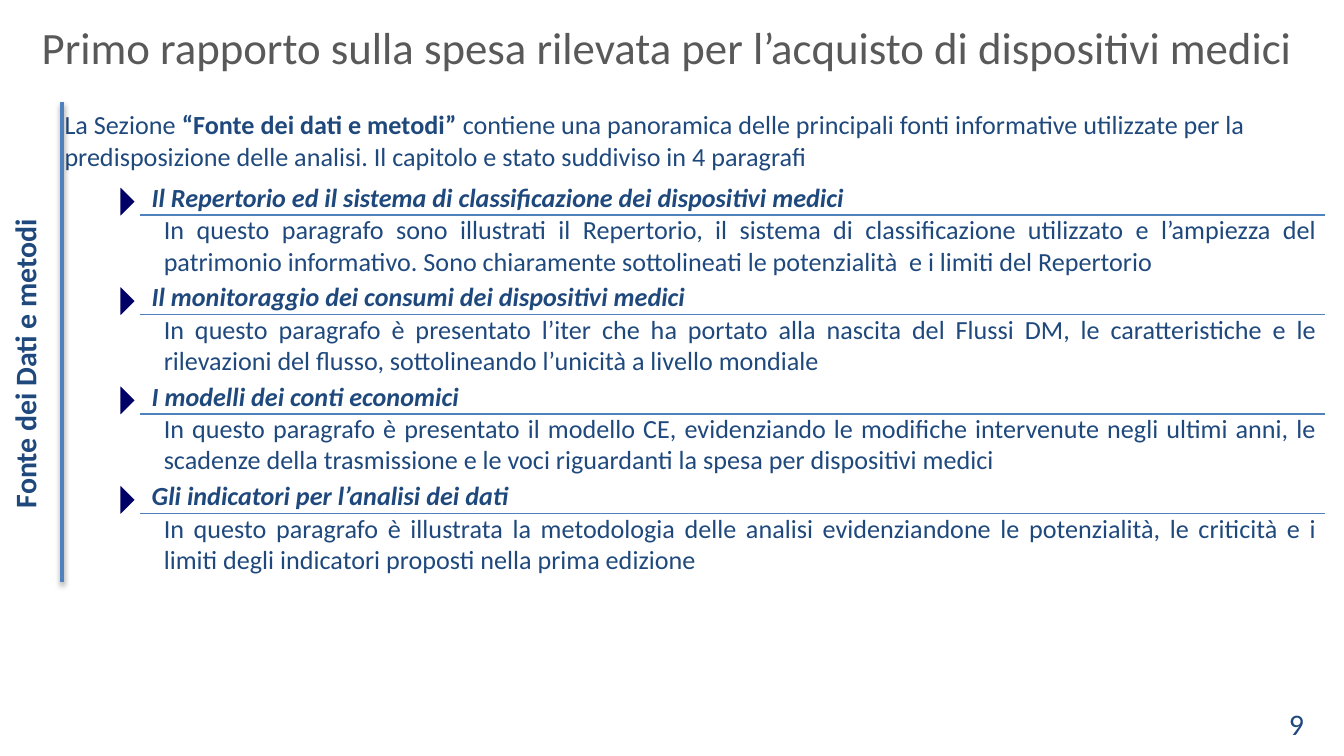
from dataclasses import dataclass

from lxml.etree import SubElement
from pptx import Presentation
from pptx.dml.color import RGBColor as Rgb
from pptx.enum.shapes import MSO_CONNECTOR as Connector, MSO_SHAPE as Shape
from pptx.enum.text import MSO_ANCHOR as Anchor, MSO_AUTO_SIZE as AutoSize, PP_ALIGN as Align
from pptx.oxml.ns import qn
from pptx.util import Inches, Pt


@dataclass(frozen=True)
class Theme:
    """Colours, font and type sizes of the slide."""
    font: str = "Calibri"
    navy: str = "1F497D"
    grey: str = "595959"
    rule: str = "4F81BD"
    marker: str = "000066"
    white: str = "FFFFFF"
    title: int = 24
    label: int = 16
    body: int = 14


THEME = Theme()
WIDTH = 10
HEIGHT = WIDTH * 9 / 16
CONTENT_TOP, CONTENT_WIDTH = 0.76, 9.59
SECTION_LEFT, SECTION_TOP, SECTION_STEP = 0.53, 1.3, 0.74
INTRO = [
    ("La Sezione ", False),
    ("“Fonte dei dati e metodi” ", True),
    ("contiene una panoramica delle principali fonti informative utilizzate per la "
     "predisposizione delle analisi. Il capitolo e stato suddiviso in 4 paragrafi", False),
]
SECTIONS = [
    ("Il Repertorio ed il sistema di classificazione dei dispositivi medici",
     "In questo paragrafo sono illustrati il Repertorio, il sistema di classificazione utilizzato "
     "e l’ampiezza del patrimonio informativo. Sono chiaramente sottolineati le potenzialità  "
     "e i limiti del Repertorio"),
    ("Il monitoraggio dei consumi dei dispositivi medici",
     "In questo paragrafo è presentato l’iter che ha portato alla nascita del Flussi DM, le "
     "caratteristiche e le rilevazioni del flusso, sottolineando l’unicità a livello mondiale"),
    ("I modelli dei conti economici",
     "In questo paragrafo è presentato il modello CE, evidenziando le modifiche intervenute negli "
     "ultimi anni, le scadenze della trasmissione e le voci riguardanti la spesa per dispositivi medici"),
    ("Gli indicatori per l’analisi dei dati",
     "In questo paragrafo è illustrata la metodologia delle analisi evidenziandone le potenzialità, "
     "le criticità e i limiti degli indicatori proposti nella prima edizione"),
]


def style_runs(paragraph, size, color=THEME.navy, bold=False, italic=False):
    """Format every run of a paragraph."""
    for run in paragraph.runs:
        font = run.font
        font.name, font.size = THEME.font, Pt(size)
        font.bold, font.italic = bold, italic
        font.color.rgb = Rgb.from_string(color)


def add_text(shapes, box, text, size, align=Align.LEFT, **style):
    """Add a wrapped text box with one paragraph."""
    frame = shapes.add_textbox(*map(Inches, box)).text_frame
    frame.word_wrap = True
    frame.text = text
    paragraph = frame.paragraphs[0]
    paragraph.alignment = align
    style_runs(paragraph, size, **style)
    return frame


def prepare_placeholder(holder, box):
    """Place a placeholder and return its first paragraph, left aligned without bullet."""
    holder.left, holder.top, holder.width, holder.height = map(Inches, box)
    frame = holder.text_frame
    frame.word_wrap = True
    frame.auto_size = AutoSize.NONE
    frame.vertical_anchor = Anchor.TOP
    paragraph = frame.paragraphs[0]
    paragraph.alignment = Align.LEFT
    paragraph.space_before = Pt(0)
    properties = paragraph._p.get_or_add_pPr()
    properties.set("marL", "0")
    properties.set("indent", "0")
    SubElement(properties, qn("a:buNone"))
    return paragraph


def add_rule(shapes, start, end, weight):
    """Add a straight rule and return its empty effect list."""
    rule = shapes.add_connector(Connector.STRAIGHT, *map(Inches, start + end))
    rule.line.color.rgb = Rgb.from_string(THEME.rule)
    rule.line.width = Pt(weight)
    return SubElement(rule._element.spPr, qn("a:effectLst"))


def add_shadow(effects):
    """Put a soft downward shadow into an effect list."""
    shadow = SubElement(effects, qn("a:outerShdw"), blurRad=str(Pt(3.1)), dist=str(Pt(1.6)),
                        dir="5400000", rotWithShape="0")
    tint = SubElement(shadow, qn("a:srgbClr"), val="000000")
    SubElement(tint, qn("a:alpha"), val="38000")


def add_marker(shapes, left, top):
    """Add a triangle that points to the right."""
    marker = shapes.add_shape(Shape.ISOSCELES_TRIANGLE, *map(Inches, (left, top, 0.24, 0.12)))
    marker.rotation = 90
    marker.shadow.inherit = False
    marker.fill.solid()
    marker.fill.fore_color.rgb = Rgb.from_string(THEME.marker)
    marker.line.color.rgb = Rgb.from_string(THEME.white)
    marker.line.width = Pt(0.75)


def add_section(slide, top, heading, description):
    """Add one grouped section: description, heading, rule and marker."""
    shapes = slide.shapes.add_group_shape().shapes
    left = SECTION_LEFT
    add_text(shapes, (left + 0.59, top + 0.24, 8.78, 0.57), description, THEME.body, Align.JUSTIFY)
    frame = add_text(shapes, (left, top, 9.69, 0.34), heading, THEME.body, bold=True, italic=True)
    properties = frame.paragraphs[0]._p.get_or_add_pPr()
    properties.set("marL", str(Inches(0.5)))
    properties.set("lvl", "1")
    add_rule(shapes, (left + 0.51, top + 0.3), (left + 9.33, top + 0.3), 0.75)
    add_marker(shapes, left + 0.3, top + 0.14)


def main():
    """Build and save the slide."""
    deck = Presentation()
    deck.slide_width, deck.slide_height = Inches(WIDTH), Inches(HEIGHT)
    slide = deck.slides.add_slide(deck.slide_layouts[1])
    title, intro = slide.placeholders

    heading = prepare_placeholder(title, (0.21, 0.1, CONTENT_WIDTH, 0.49))
    heading.text = "Primo rapporto sulla spesa rilevata per l’acquisto di dispositivi medici"
    style_runs(heading, THEME.title, THEME.grey)

    opening = prepare_placeholder(intro, (0.38, CONTENT_TOP, CONTENT_WIDTH, 3.55))
    for text, _ in INTRO:
        opening.add_run().text = text
    style_runs(opening, THEME.body)
    for run, (_, bold) in zip(opening.runs, INTRO):
        run.font.bold = bold

    side = add_text(slide.shapes, (0, 0.57, 0.47, 4.27), "Fonte dei Dati e metodi",
                    THEME.label, Align.CENTER, bold=True)
    side._txBody.bodyPr.set("vert", "vert270")
    add_text(slide.shapes, (7.47, 5.2, 2.33, 0.3), "9", THEME.label, Align.RIGHT)

    for index, section in enumerate(SECTIONS):
        add_section(slide, SECTION_TOP + index * SECTION_STEP, *section)
    add_shadow(add_rule(slide.shapes, (0.46, CONTENT_TOP), (0.46, 4.33), 2))
    deck.save("out.pptx")


if __name__ == "__main__":
    main()
